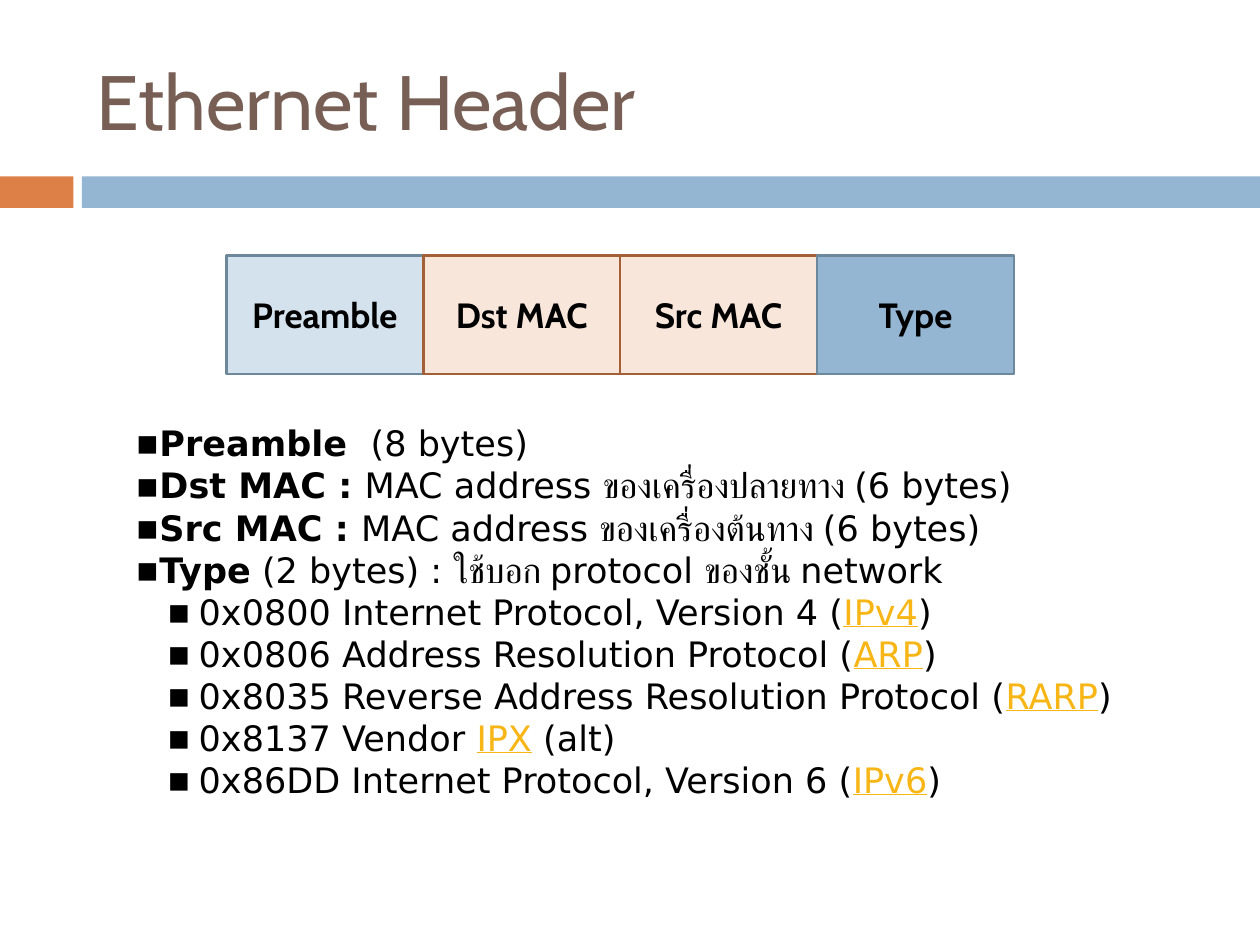
from lxml import etree
from pptx import Presentation
from pptx.dml.color import RGBColor
from pptx.enum.shapes import MSO_SHAPE
from pptx.enum.text import MSO_ANCHOR, MSO_AUTO_SIZE, PP_ALIGN
from pptx.oxml.ns import qn
from pptx.util import Pt

RECTANGLE = MSO_SHAPE.RECTANGLE
MIDDLE = MSO_ANCHOR.MIDDLE
FIT_SHAPE = MSO_AUTO_SIZE.SHAPE_TO_FIT_TEXT
LEFT, CENTER = PP_ALIGN.LEFT, PP_ALIGN.CENTER

COLOURS = {
    "title": "775F55", "text": "000000", "link": "F7B615",
    "orange": "DD8047", "blue": "94B6D2",
    "pale blue": "D4E2ED", "pale orange": "F8E6DA",
    "blue line": "6D879B", "orange line": "A35F35",
}
HEADING_FONT, BODY_FONT = "Cabin", "DejaVu Sans"

TITLE = "Ethernet Header"
BARS = [(0, 42, "orange"), (46.8, 673.2, "blue")]
FIELDS = [
    ("Preamble", "pale blue", "blue line"),
    ("Dst MAC", "pale orange", "orange line"),
    ("Src MAC", "pale orange", "orange line"),
    ("Type", "blue", "blue line"),
]
DETAILS = [
    ("Preamble ", " (8 bytes)"),
    ("Dst MAC : ", "MAC address ของเครื่องปลายทาง (6 bytes)"),
    ("Src MAC : ", "MAC address ของเครื่องต้นทาง (6 bytes)"),
    ("Type", " (2 bytes) : ใช้บอก protocol ของชั้น network"),
]
TYPES = [
    ("0x0800 Internet Protocol, Version 4 (", "IPv4", ")"),
    ("0x0806 Address Resolution Protocol (", "ARP", ")"),
    ("0x8035 Reverse Address Resolution Protocol (", "RARP", ")"),
    ("0x8137 Vendor ", "IPX", " (alt)"),
    ("0x86DD Internet Protocol, Version 6 (", "IPv6", ")"),
]

FIELD_LEFT, FIELD_TOP, FIELD_WIDTH, FIELD_HEIGHT = 129.4, 146, 112.5, 67.8


def colour(name):
    return RGBColor.from_string(COLOURS[name])


def add_span(para, text, ink="text", **values):
    span = para.add_run()
    span.text = text
    span.font.color.rgb = colour(ink)
    for name, value in values.items():
        setattr(span.font, name, value)


def add_box(slide, left, top, width, height, fill, line=None):
    box = slide.shapes.add_shape(RECTANGLE, Pt(left), Pt(top), Pt(width), Pt(height))
    box.shadow.inherit = False
    box.fill.solid()
    box.fill.fore_color.rgb = colour(fill)
    if line:
        box.line.color.rgb = colour(line)
        box.line.width = Pt(1.5)
    else:
        box.line.fill.background()
    return box


def set_bullet(para, margin, indent):
    properties = para._p.get_or_add_pPr()
    properties.set("marL", str(Pt(margin)))
    properties.set("indent", str(Pt(indent)))
    etree.SubElement(properties, qn("a:buFont")).set("typeface", BODY_FONT)
    etree.SubElement(properties, qn("a:buChar")).set("char", "▪")


def add_title(slide):
    title = slide.shapes.title
    title.left, title.top, title.width, title.height = Pt(48.2), Pt(18), Pt(642), Pt(78)
    title.text_frame.vertical_anchor = MIDDLE
    para = title.text_frame.paragraphs[0]
    para.alignment = LEFT
    add_span(para, TITLE, "title", size=Pt(44), name=HEADING_FONT)


def add_fields(slide):
    for index, (label, fill, line) in enumerate(FIELDS):
        left = FIELD_LEFT + index * FIELD_WIDTH
        box = add_box(slide, left, FIELD_TOP, FIELD_WIDTH, FIELD_HEIGHT, fill, line)
        box.text_frame.vertical_anchor = MIDDLE
        para = box.text_frame.paragraphs[0]
        para.alignment = CENTER
        add_span(para, label, size=Pt(20), name=HEADING_FONT, bold=True)


def add_details(slide):
    frame = slide.shapes.add_textbox(Pt(70.5), Pt(237.6), Pt(607), Pt(225.4)).text_frame
    frame.word_wrap = True
    frame.auto_size = FIT_SHAPE
    body = {"size": Pt(20), "name": BODY_FONT}
    for index, parts in enumerate(DETAILS + TYPES):
        para = frame.add_paragraph() if index else frame.paragraphs[0]
        para.line_spacing = Pt(24)
        if index < len(DETAILS):
            set_bullet(para, 0, 0)
            term, description = parts
            add_span(para, term, bold=True, **body)
            add_span(para, description, **body)
        else:
            para.level = 1
            set_bullet(para, 36, -18)
            before, protocol, after = parts
            add_span(para, before, **body)
            add_span(para, protocol, "link", underline=True, **body)
            add_span(para, after, **body)


def main():
    deck = Presentation()
    deck.slide_width, deck.slide_height = Pt(720), Pt(540)
    slide = deck.slides.add_slide(deck.slide_layouts[5])
    for left, width, fill in BARS:
        add_box(slide, left, 100.8, width, 18, fill)
    add_title(slide)
    add_fields(slide)
    add_details(slide)
    deck.save("out.pptx")


if __name__ == "__main__":
    main()
